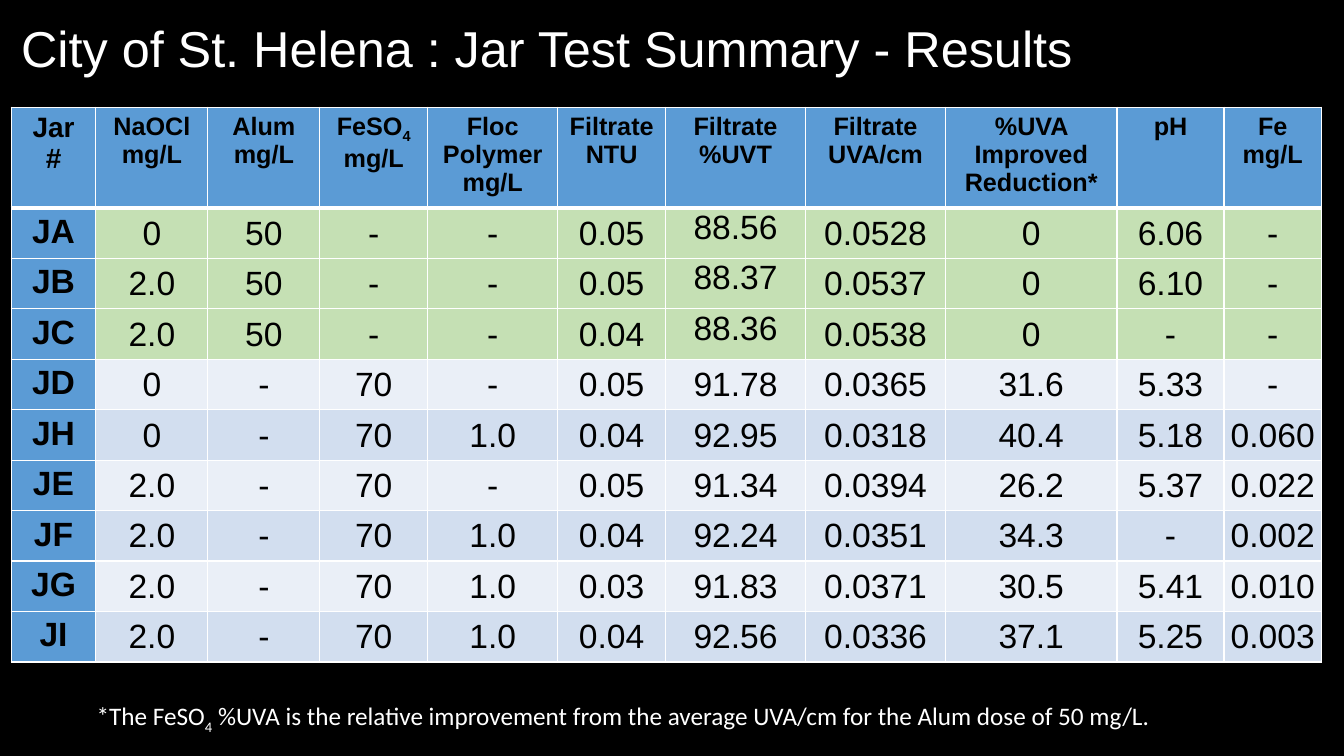
"""Build the jar test results slide."""
import pptx
import pptx.dml.color
import pptx.enum.text
import pptx.oxml
import pptx.oxml.ns
import pptx.util

Pt = pptx.util.Pt
ANCHOR = pptx.enum.text.MSO_ANCHOR
ALIGN = pptx.enum.text.PP_ALIGN

TITLE = "City of St. Helena : Jar Test Summary - Results"
NOTE = ["*The FeSO", "4", " %UVA is the relative improvement from the average "
        "UVA/cm for the Alum dose of 50 mg/L."]
HEADERS = ["Jar\n#", "NaOCl\nmg/L", "Alum\nmg/L", "FeSO4\nmg/L", "Floc\nPolymer\nmg/L",
           "Filtrate\nNTU", "Filtrate\n%UVT", "Filtrate\nUVA/cm",
           "%UVA Improved\nReduction*", "pH", "Fe\nmg/L"]
JARS = [
    ["JA", "0", "50", "-", "-", "0.05", "88.56", "0.0528", "0", "6.06", "-"],
    ["JB", "2.0", "50", "-", "-", "0.05", "88.37", "0.0537", "0", "6.10", "-"],
    ["JC", "2.0", "50", "-", "-", "0.04", "88.36", "0.0538", "0", "-", "-"],
    ["JD", "0", "-", "70", "-", "0.05", "91.78", "0.0365", "31.6", "5.33", "-"],
    ["JH", "0", "-", "70", "1.0", "0.04", "92.95", "0.0318", "40.4", "5.18", "0.060"],
    ["JE", "2.0", "-", "70", "-", "0.05", "91.34", "0.0394", "26.2", "5.37", "0.022"],
    ["JF", "2.0", "-", "70", "1.0", "0.04", "92.24", "0.0351", "34.3", "-", "0.002"],
    ["JG", "2.0", "-", "70", "1.0", "0.03", "91.83", "0.0371", "30.5", "5.41", "0.010"],
    ["JI", "2.0", "-", "70", "1.0", "0.04", "92.56", "0.0336", "37.1", "5.25", "0.003"],
]
WIDTHS = [60.5, 80, 80, 77, 93, 77, 100, 100, 122.5, 76.5, 69.5]
HEADER_HEIGHT, ROW_HEIGHT = 67.6, 34
ALUM_ROWS, UVT_COLUMN = 3, 6
BLUE, GREEN, BANDS = "5B9BD5", "C5E0B4", ["D2DEEF", "EAEFF7"]
WHITE, BLACK = "FFFFFF", "000000"


def rgb(value):
    return pptx.dml.color.RGBColor.from_string(value)


def style(span, size, font, color, bold=False):
    span.font.size = Pt(size)
    span.font.name = font
    span.font.color.rgb = rgb(color)
    span.font.bold = bold


def lower(span):
    span.font._element.set("baseline", "-25000")


def add_text(page, parts, left, top, width, height, size, font):
    box = page.shapes.add_textbox(Pt(left), Pt(top), Pt(width), Pt(height))
    para = box.text_frame.paragraphs[0]
    for part in parts:
        span = para.add_run()
        span.text = part
        style(span, size, font, WHITE)
        if part == "4":
            lower(span)
    return box


def add_borders(cell, top, bottom):
    properties = cell._tc.get_or_add_tcPr()
    sides = [("L", 1), ("R", 1), ("T", top), ("B", bottom)]
    for place, (side, width) in enumerate(sides):
        properties.insert(place, pptx.oxml.parse_xml(
            f'<a:ln{side} {pptx.oxml.ns.nsdecls("a")} w="{Pt(width)}"><a:solidFill>'
            f'<a:srgbClr val="{WHITE}"/></a:solidFill></a:ln{side}>'))


def fill_color(row, column):
    if row == 0 or column == 0:
        return BLUE
    return GREEN if row <= ALUM_ROWS else BANDS[row % 2 == 0]


def fill_cell(cell, text, row, column):
    cell.fill.solid()
    cell.fill.fore_color.rgb = rgb(fill_color(row, column))
    add_borders(cell, 3 if row == 1 else 1, 3 if row == 0 else 1)
    if row and column:
        cell.margin_left = cell.margin_right = cell.margin_top = Pt(0.72)
        cell.margin_bottom = Pt(0)
        top_set = column == UVT_COLUMN and row <= ALUM_ROWS
        cell.vertical_anchor = ANCHOR.TOP if top_set else ANCHOR.MIDDLE
    size = 24 if row else 18 if column else 20
    cell.text_frame.text = text
    for para in cell.text_frame.paragraphs:
        para.alignment = ALIGN.CENTER
        if para.text == "FeSO4":
            para.text = "FeSO"
            para.add_run().text = "4"
            lower(para.runs[1])
        for span in para.runs:
            style(span, size, "Arial", BLACK, row == 0 or column == 0)


def main():
    deck = pptx.Presentation()
    deck.slide_width, deck.slide_height = Pt(960), Pt(540)
    page = deck.slides.add_slide(deck.slide_layouts[6])
    page.background.fill.solid()
    page.background.fill.fore_color.rgb = rgb(BLACK)

    title = add_text(page, [TITLE], 8, 9.5, 921.5, 54.5, 36, "Arial")
    title.text_frame.word_wrap = True
    title.text_frame.vertical_anchor = ANCHOR.MIDDLE
    title.text_frame.paragraphs[0].line_spacing = 0.9

    rows = [HEADERS] + JARS
    heights = [HEADER_HEIGHT] + [ROW_HEIGHT] * len(JARS)
    table = page.shapes.add_table(len(rows), len(WIDTHS), Pt(8), Pt(76.5),
                                  Pt(sum(WIDTHS)), Pt(sum(heights))).table
    for column, width in zip(table.columns, WIDTHS):
        column.width = Pt(width)
    for line, height in zip(table.rows, heights):
        line.height = Pt(height)
    for row, texts in enumerate(rows):
        for column, text in enumerate(texts):
            fill_cell(table.cell(row, column), text, row, column)

    note = add_text(page, NOTE, 62, 497, 775, 29, 18, "Calibri")
    note.text_frame.word_wrap = False
    note.text_frame.auto_size = pptx.enum.text.MSO_AUTO_SIZE.SHAPE_TO_FIT_TEXT
    deck.save("out.pptx")


if __name__ == "__main__":
    main()
